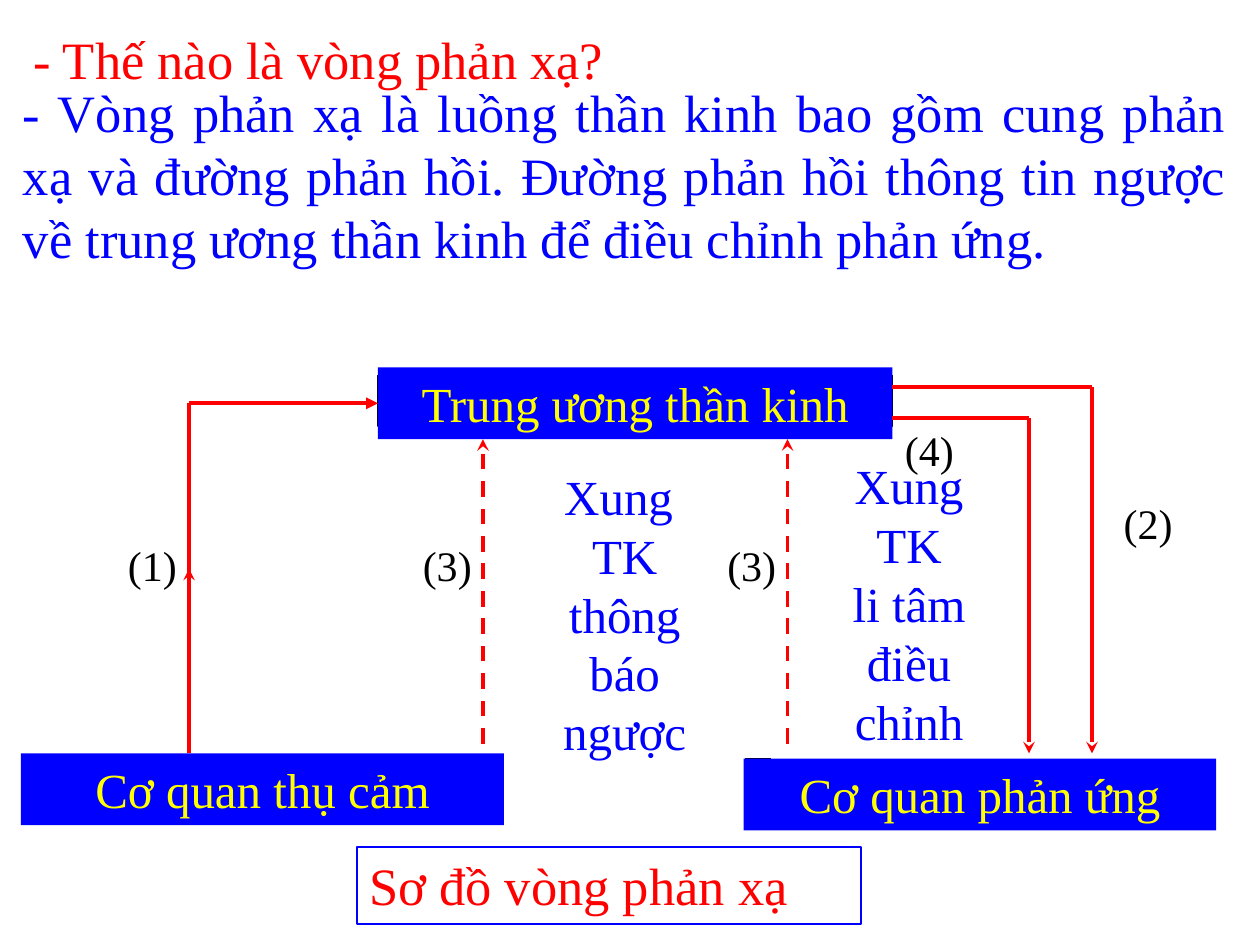
from itertools import pairwise
from dataclasses import dataclass
from lxml.etree import SubElement as Sub
from pptx import Presentation as Deck
from pptx.dml.color import RGBColor as RGB
from pptx.enum.dml import MSO_LINE as Dash
from pptx.enum.shapes import MSO_CONNECTOR as Conn, MSO_SHAPE as Form
from pptx.enum.text import PP_ALIGN as Align, MSO_ANCHOR as Anchor
from pptx.oxml.ns import qn
from pptx.util import Pt


@dataclass(frozen=True)
class Theme:
    face: str = "Times New Roman"
    red: RGB = RGB(255, 0, 0)
    blue: RGB = RGB(0, 0, 255)
    gold: RGB = RGB(255, 255, 0)
    navy: RGB = RGB(0x33, 0x33, 0x99)
    black: RGB = RGB(0, 0, 0)
    title: int = 30
    body: int = 28
    mark: int = 24
    thin: float = 0.75
    bold: float = 2.25


def apply(item, values):
    for name, value in values.items():
        setattr(item, name, value)


class Board:
    def __init__(self, slide, theme):
        self.shapes = slide.shapes
        self.theme = theme

    def label(self, shape, words, size, color, align):
        frame = shape.text_frame
        apply(frame, {"word_wrap": True, "vertical_anchor": Anchor.TOP})
        para = frame.paragraphs[0]
        apply(para, {"text": words, "alignment": align})
        for run in para.runs:
            apply(run.font, {"name": self.theme.face, "size": Pt(size)})
            run.font.color.rgb = color

    def text(self, spot, words, size, color, align=Align.LEFT):
        box = self.shapes.add_textbox(*map(Pt, spot))
        self.label(box, words, size, color, align)

    def rect(self, spot, fill=None, edge=None):
        box = self.shapes.add_shape(Form.RECTANGLE, *map(Pt, spot))
        box.shadow.inherit = False
        if fill is None:
            box.fill.background()
        else:
            box.fill.solid()
            box.fill.fore_color.rgb = fill
        if edge is None:
            box.line.fill.background()
        else:
            box.line.color.rgb = edge
            box.line.width = Pt(self.theme.thin)
        return box

    def organ(self, spot, words):
        box = self.rect(spot, self.theme.blue)
        self.label(box, words, self.theme.body, self.theme.gold, Align.CENTER)
        return box

    def line(self, start, end, tip=None, dash=None):
        line = self.shapes.add_connector(
            Conn.STRAIGHT, *map(Pt, (*start, *end)))
        line.line.color.rgb = self.theme.red
        apply(line.line, {"width": Pt(self.theme.bold), "dash_style": dash})
        props = line._element.spPr
        if tip:
            Sub(props.find(qn("a:ln")), qn("a:tailEnd"), type=tip)
        Sub(props, qn("a:effectLst"))
        return line

    def route(self, points, tip):
        pairs = list(pairwise(points))
        for start, end in pairs[:-1]:
            self.line(start, end)
        return self.line(*pairs[-1], tip)


def main():
    deck = Deck()
    apply(deck, {"slide_width": Pt(720), "slide_height": Pt(540)})
    theme = Theme()
    board = Board(deck.slides.add_slide(deck.slide_layouts[6]), theme)

    left, top, wide, high = 216, 210, 294, 41
    right, base, mid = left + wide, top + high, top + high / 2
    floor = 430.5

    for spot in ((left, 214.5, wide, 29), (426, 433.5, 14.5, 29)):
        board.rect(spot, theme.navy, theme.black)
    hub = board.organ((left, top, wide, high), "Trung ương thần kinh")
    board.organ((12, floor, 276, high), "Cơ quan thụ cảm")
    board.organ((425, 433.5, 270, high), "Cơ quan phản ứng")

    inward = board.route([(108, floor), (108, mid), (left, mid)], "triangle")
    inward.end_connect(hub, 1)
    board.line((108, 353), (108, 325), "stealth")
    for x, y in ((624, 221), (588, 239)):
        board.route([(right, y), (x, y), (x, floor)], "stealth")
    for x in (276, 450):
        board.line((x, 425), (x, base), "stealth", Dash.DASH)

    marks = (("(1)", 66, 304.5), ("(2)", 635, 280.5), ("(3)", 234.5, 304.5),
             ("(3)", 408.5, 304.5), ("(4)", right, 239))
    for words, x, y in marks:
        board.text((x, y, 49, 36), words, theme.mark, theme.black)

    notes = (("Xung \vTK thông\vbáo\vngược", 306, 263),
             ("Xung\vTK\vli tâm điều chỉnh", 468.5, 257))
    for words, x, y in notes:
        board.text((x, y, 102, 176), words, theme.body, theme.blue,
                   Align.CENTER)

    name = board.rect((204, 484, 288, 44), edge=theme.blue)
    board.label(name, "Sơ đồ vòng phản xạ", theme.title, theme.red, Align.LEFT)
    board.text((12, 12, 492, 43), "- Thế nào là vòng phản xạ?",
               theme.title, theme.red)
    board.text((6, 42, 702, 117),
               "- Vòng phản xạ là luồng thần kinh bao gồm cung phản xạ và "
               "đường phản hồi. Đường phản hồi thông tin ngược về trung ương "
               "thần kinh để điều chỉnh phản ứng.",
               theme.title, theme.blue, Align.JUSTIFY)

    deck.save("out.pptx")


if __name__ == "__main__":
    main()
